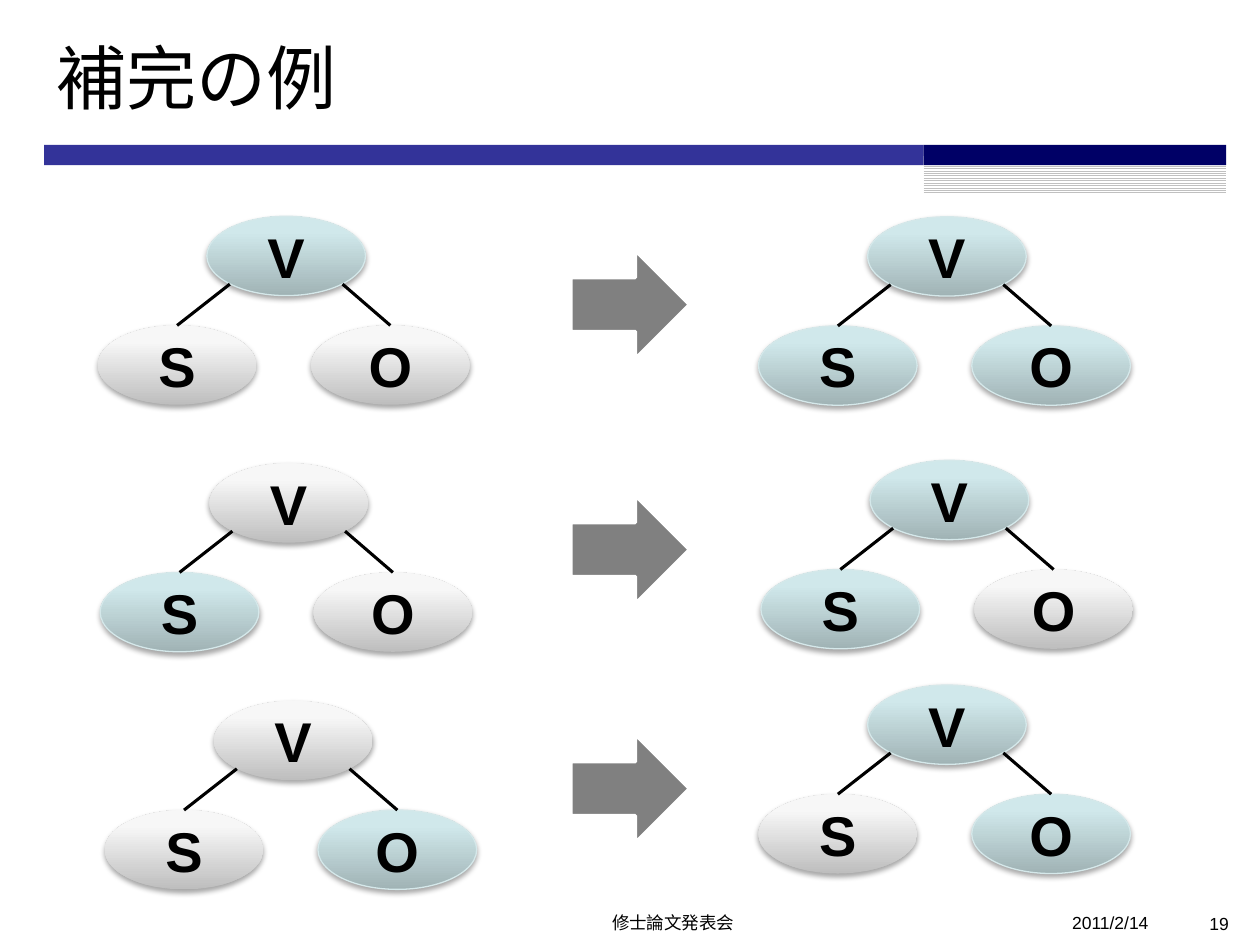
import lxml.etree
import pptx
import pptx.dml.color
import pptx.enum.dml
import pptx.enum.shapes
import pptx.enum.text
import pptx.oxml.ns
import pptx.util

Cm, Pt = pptx.util.Cm, pptx.util.Pt
KIND = pptx.enum.shapes.MSO_SHAPE
ALIGN = pptx.enum.text.PP_ALIGN
MID = pptx.enum.text.MSO_ANCHOR.MIDDLE
qn = pptx.oxml.ns.qn

# Node size and places within a tree, in cm
WIDE, HIGH = 3.2, 1.6
NODES = {"S": (0, 2.2), "O": (4.3, 2.2), "V": (2.2, 0)}
BLUE = [(0, "A0B3B5"), (80, "D0E8EB"), (100, "D1EAEC")]
GRAY = [(0, "BEBEBE"), (80, "F7F7F7"), (100, "F8F8F8")]

# Each tree: left, top, nodes that are filled in
ROWS = [
    ((1.97, 4.36, "V"), (15.29, 4.37, "VSO"), 5.05),
    ((2.02, 9.34, "S"), (15.34, 9.28, "VS"), 9.99),
    ((2.11, 14.13, "O"), (15.29, 13.81, "VO"), 14.81),
]


def tint(code):
    return pptx.dml.color.RGBColor.from_string(code)


def write(shape, text, size, align, bold=False):
    frame = shape.text_frame
    frame.word_wrap = True
    para = frame.paragraphs[0]
    para.text = text
    para.alignment = align
    para.font.name = "Arial"
    para.font.size = Pt(size)
    para.font.bold = bold
    para.font.color.rgb = tint("000000")
    return frame


def label(slide, text, box, size, align):
    shape = slide.shapes.add_textbox(*map(Cm, box))
    return write(shape, text, size, align)


def block(slide, kind, box, code):
    shape = slide.shapes.add_shape(kind, *map(Cm, box))
    shape.shadow.inherit = False
    shape.fill.solid()
    shape.fill.fore_color.rgb = tint(code)
    shape.line.fill.background()
    return shape


def blend(shape, stops):
    shape.fill.gradient()
    shape.fill.gradient_angle = 90
    ramp = shape._element.spPr.find(".//" + qn("a:gsLst"))
    for old in list(ramp):
        ramp.remove(old)
    for spot, code in stops:
        stop = lxml.etree.SubElement(ramp, qn("a:gs"), pos=str(spot * 1000))
        lxml.etree.SubElement(stop, qn("a:srgbClr"), val=code)


def shade(shape):
    shape.shadow.inherit = False
    effects = shape._element.spPr.find(qn("a:effectLst"))
    outer = lxml.etree.SubElement(
        effects, qn("a:outerShdw"), blurRad="40000", dist="23000",
        dir="5400000", rotWithShape="0")
    color = lxml.etree.SubElement(outer, qn("a:srgbClr"), val="000000")
    lxml.etree.SubElement(color, qn("a:alpha"), val="35000")


def node(group, text, left, top, known):
    shape = group.shapes.add_shape(
        KIND.OVAL, Cm(left), Cm(top), Cm(WIDE), Cm(HIGH))
    blend(shape, BLUE if known else GRAY)
    if known:
        shape.line.color.rgb = tint("D5E8EA")
        shape.line.width = Pt(0.75)
    else:
        shape.line.fill.background()
    shade(shape)
    write(shape, text, 32, ALIGN.CENTER, True).vertical_anchor = MID


def edge(group, start, end):
    line = group.shapes.add_connector(
        pptx.enum.shapes.MSO_CONNECTOR.STRAIGHT, *map(Cm, start + end))
    line.line.color.rgb = tint("000000")
    line.line.width = Pt(1.75)
    lxml.etree.SubElement(line._element.spPr, qn("a:effectLst"))


def tree(slide, left, top, known):
    group = slide.shapes.add_group_shape()
    for text, (x, y) in NODES.items():
        node(group, text, left + x, top + y, text in known)
    # Edges leave the root at 45 degrees and meet the tops of the children
    root = left + NODES["V"][0] + WIDE / 2
    low = top + HIGH / 2 * (1 + 0.71)
    for text, side in (("S", -1), ("O", 1)):
        x, y = NODES[text]
        edge(group, (root + side * 0.71 * WIDE / 2, low),
             (left + x + WIDE / 2, top + y))


def arrow(slide, top):
    shape = block(slide, KIND.RIGHT_ARROW, (11.51, top, 2.39, 2.18), "808080")
    shape.line.color.rgb = tint("FFFFFF")
    shape.line.width = Pt(2)


def frame(slide):
    # Bars under the title
    block(slide, KIND.RECTANGLE, (0.89, 2.92, 17.73, 0.41), "333399")
    lines = block(slide, KIND.RECTANGLE, (18.62, 3.15, 6.1, 0.76), "FFFFFF")
    lines.fill.patterned()
    lines.fill.pattern = pptx.enum.dml.MSO_PATTERN.LIGHT_HORIZONTAL
    lines.fill.fore_color.rgb = tint("C0C0C0")
    lines.fill.back_color.rgb = tint("FFFFFF")
    block(slide, KIND.RECTANGLE, (18.62, 2.92, 6.1, 0.41), "000066")
    # Title and footer
    title = label(slide, "補完の例", (0.89, 0.33, 23.83, 2.41), 40, ALIGN.LEFT)
    title.vertical_anchor = MID
    label(slide, "修士論文発表会", (5.77, 18.26, 15.6, 0.79), 10, ALIGN.CENTER)
    label(slide, "2011/2/14", (19.46, 18.26, 3.94, 0.79), 10, ALIGN.RIGHT)
    label(slide, "19", (23.5, 18.29, 1.52, 0.76), 10, ALIGN.RIGHT)


def main():
    deck = pptx.Presentation()
    deck.slide_width, deck.slide_height = Cm(25.4), Cm(19.05)
    slide = deck.slides.add_slide(deck.slide_layouts[6])
    frame(slide)
    # One row per example: before, arrow, after
    for before, after, top in ROWS:
        tree(slide, *before)
        tree(slide, *after)
        arrow(slide, top)
    deck.save("out.pptx")


if __name__ == "__main__":
    main()
